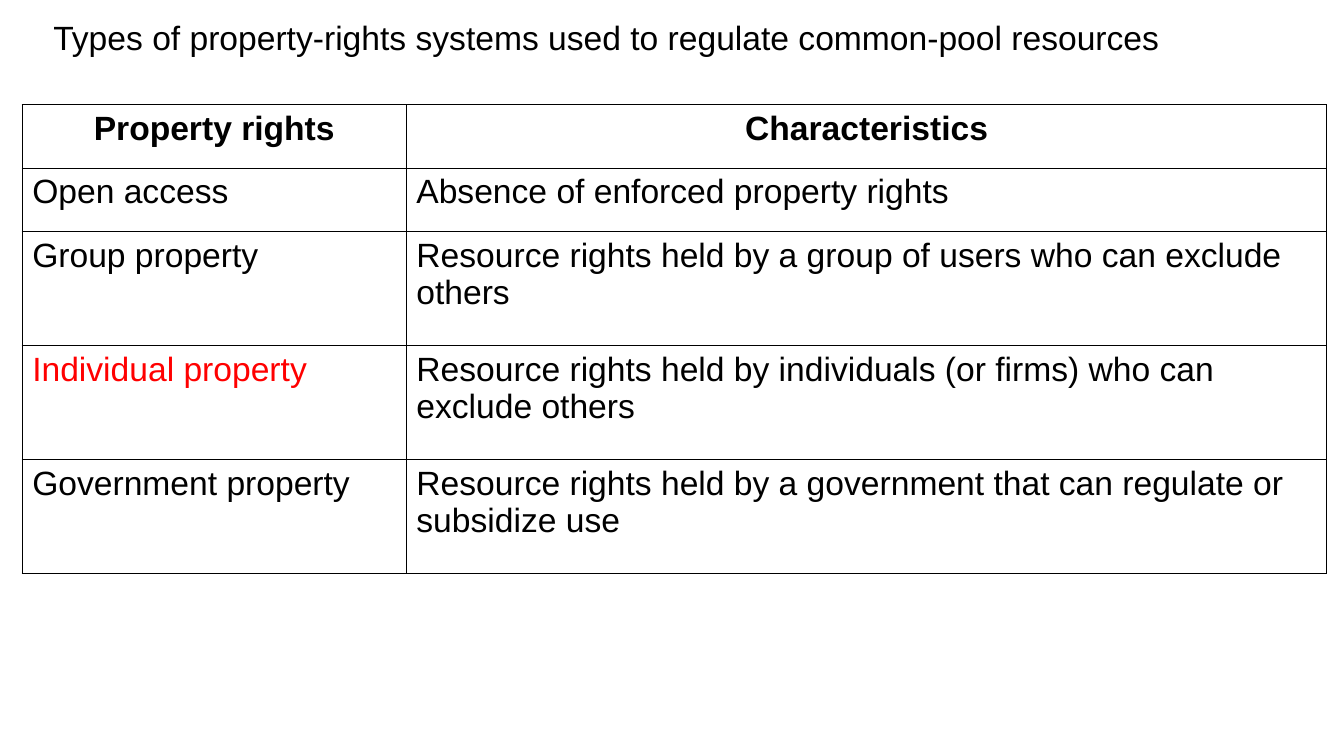
"""Build a slide with a table of property-rights systems."""
from typing import NamedTuple

from lxml.etree import SubElement
from pptx import Presentation
from pptx.dml.color import RGBColor
from pptx.enum.text import MSO_AUTO_SIZE, PP_ALIGN as Align
from pptx.oxml.ns import qn
from pptx.table import _Cell as Cell
from pptx.text.text import TextFrame
from pptx.util import Inches, Pt

COLORS = {"text": "000000", "accent": "FF0000", "border": "000000"}
COLUMN_WIDTHS = (3.81, 9.13)
TABLE_LEFT, TABLE_TOP = 0.22, 1.04


class RightsRow(NamedTuple):
    system: str
    characteristics: str
    height: float = 1.13
    system_color: str = "text"
    header: bool = False


ROWS = (
    RightsRow("Property rights", "Characteristics", height=0.63, header=True),
    RightsRow("Open access", "Absence of enforced property rights", height=0.63),
    RightsRow("Group property",
              "Resource rights held by a group of users who can exclude others"),
    RightsRow("Individual property",
              "Resource rights held by individuals (or firms) who can exclude others",
              system_color="accent"),
    RightsRow("Government property",
              "Resource rights held by a government that can regulate or subsidize use"),
)


def write_text(frame: TextFrame, text: str, *, color: str = "text",
               bold: bool = False, align: Align = Align.LEFT) -> None:
    frame.word_wrap = True
    para = frame.paragraphs[0]
    para.alignment = align
    span = para.add_run()
    span.text = text
    span.font.name = "Arial"
    span.font.size = Pt(24)
    span.font.bold = bold
    span.font.color.rgb = RGBColor.from_string(COLORS[color])


def draw_borders(cell: Cell) -> None:
    properties = cell._tc.get_or_add_tcPr()
    for position, side in enumerate(("lnL", "lnR", "lnT", "lnB")):
        line = SubElement(properties, qn(f"a:{side}"), w=str(Pt(1)))
        fill = SubElement(line, qn("a:solidFill"))
        SubElement(fill, qn("a:srgbClr"), val=COLORS["border"])
        properties.insert(position, line)


def add_rights_table(page) -> None:
    table = page.shapes.add_table(
        len(ROWS), len(COLUMN_WIDTHS), Inches(TABLE_LEFT), Inches(TABLE_TOP),
        Inches(sum(COLUMN_WIDTHS)), Inches(sum(row.height for row in ROWS))).table
    table.first_row = False
    table.horz_banding = False
    for column, width in zip(table.columns, COLUMN_WIDTHS):
        column.width = Inches(width)
    for table_row, row in zip(table.rows, ROWS):
        table_row.height = Inches(row.height)
        texts = ((row.system, row.system_color), (row.characteristics, "text"))
        for cell, (text, color) in zip(table_row.cells, texts):
            cell.fill.background()
            draw_borders(cell)
            write_text(cell.text_frame, text, color=color, bold=row.header,
                       align=Align.CENTER if row.header else Align.LEFT)


def add_title(page) -> None:
    box = page.shapes.add_textbox(Inches(0.43), Inches(0.12), Inches(12.25), Inches(0.5))
    write_text(box.text_frame,
               "Types of property-rights systems used to regulate common-pool resources")
    box.text_frame.auto_size = MSO_AUTO_SIZE.SHAPE_TO_FIT_TEXT


def main() -> None:
    deck = Presentation()
    deck.slide_width, deck.slide_height = Inches(13.33), Inches(7.5)
    page = deck.slides.add_slide(deck.slide_layouts[6])
    add_rights_table(page)
    add_title(page)
    deck.save("out.pptx")


if __name__ == "__main__":
    main()
